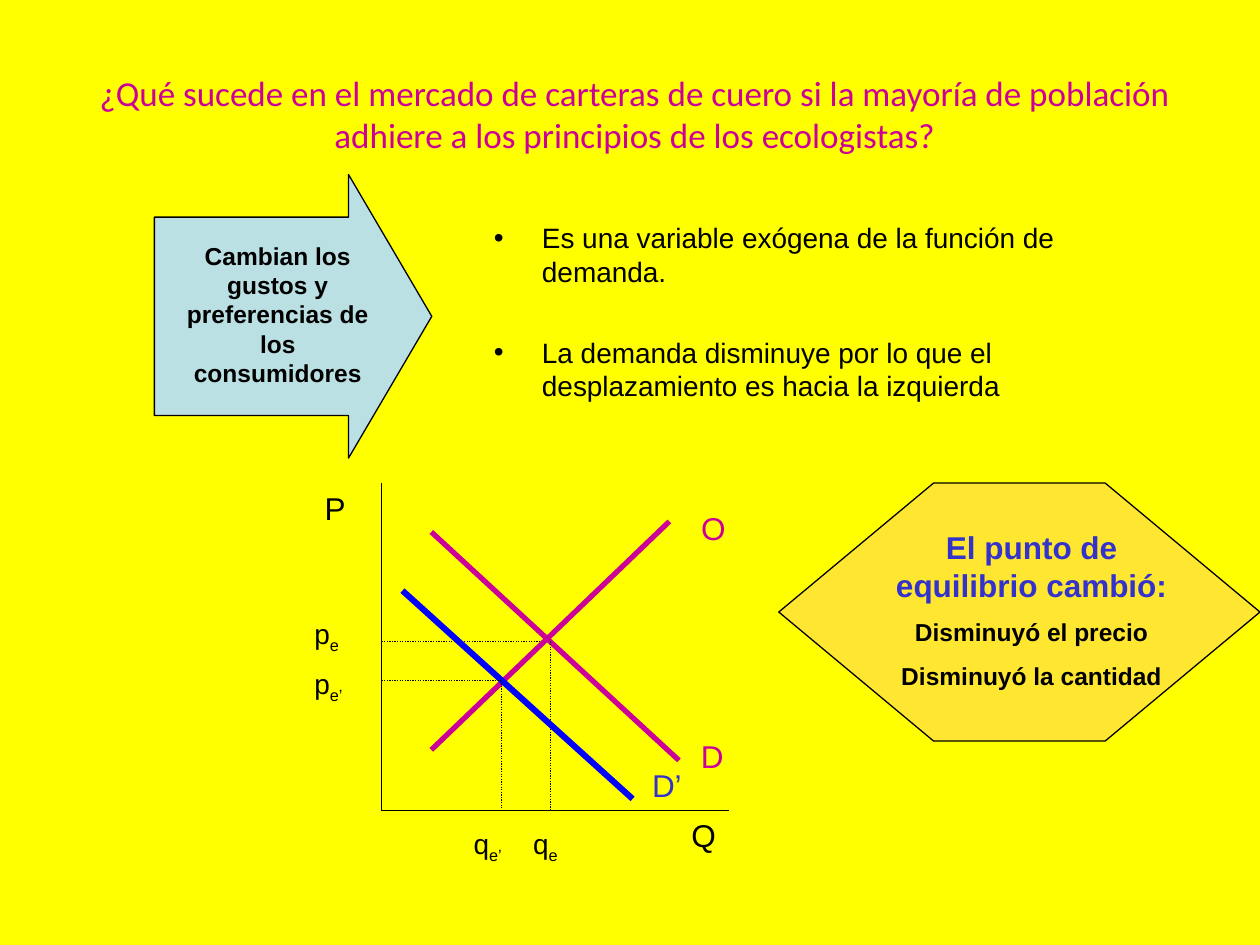
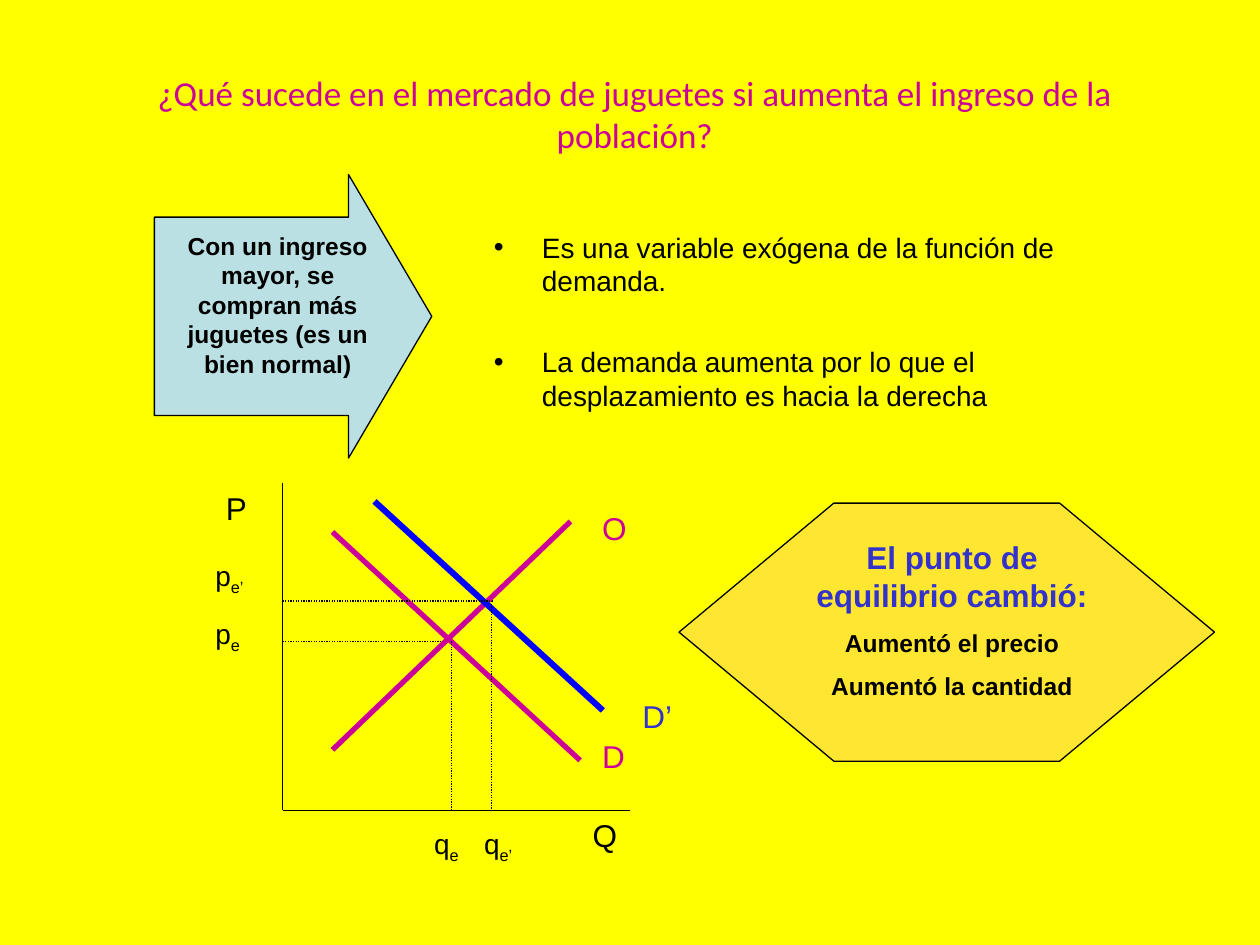
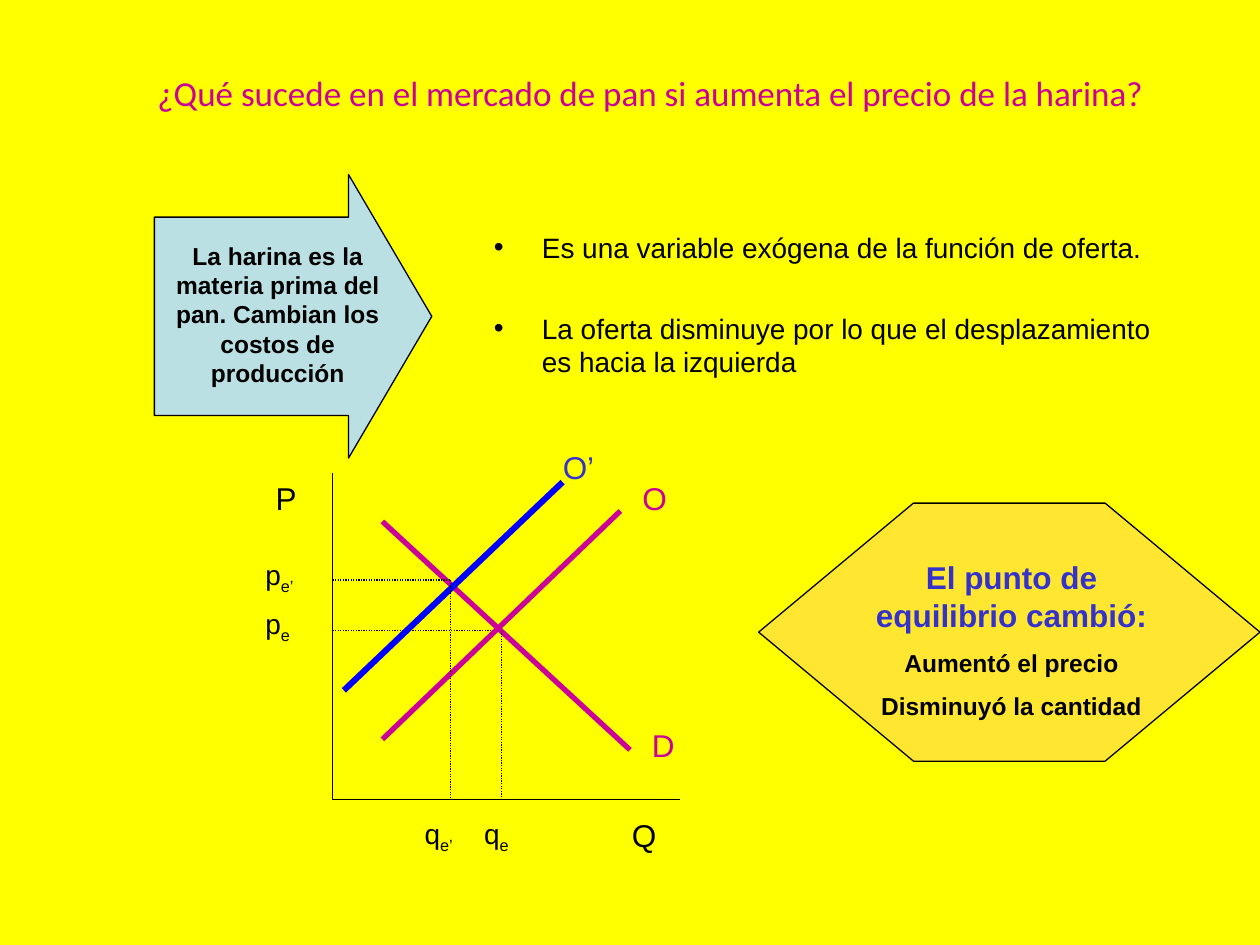
import dataclasses

import lxml.etree
import pptx
import pptx.dml.color
import pptx.enum.dml
import pptx.enum.shapes
import pptx.enum.text
import pptx.oxml.ns
import pptx.util

Pt = pptx.util.Pt
qn = pptx.oxml.ns.qn
ALIGN = pptx.enum.text.PP_ALIGN
AUTOFIT = pptx.enum.text.MSO_AUTO_SIZE
SHAPES = pptx.enum.shapes.MSO_SHAPE
DOTTED = pptx.enum.dml.MSO_LINE.ROUND_DOT


@dataclasses.dataclass(frozen=True)
class Theme:
    background: str = "FFFF00"
    ink: str = "000000"
    magenta: str = "CC0099"
    shifted_curve: str = "0000FF"
    highlight: str = "3333CC"
    cause_fill: str = "BBE0E3"
    result_fill: str = "FF99CC"
    result_opacity: int = 24000
    title_font: str = "Calibri"
    text_font: str = "Arial"
    title_size: float = 20
    heading_size: float = 18
    body_size: float = 16
    note_size: float = 14
    thin: float = 0.75
    curve: float = 3
    bold_curve: float = 3.5
    bullet_indent: float = 27.5
    bullet_gap: float = 27
    result_gap: float = 8


THEME = Theme()


@dataclasses.dataclass(frozen=True)
class MarketCase:
    """One market question; graph lengths are measured from the origin."""
    title: str
    title_box: tuple
    cause: str
    cause_top: float
    effects: tuple
    effects_top: float
    origin: tuple
    shifted_from: tuple
    shifted_to: tuple
    shifted_name: str
    shifted_label: tuple
    new_point: tuple
    new_price_top: float
    new_quantity_left: float
    supply_label: tuple
    quantity_axis_label: tuple
    result_box: tuple
    result_text_offset: tuple
    changes: tuple


CASES = (
    MarketCase(
        title="¿Qué sucede en el mercado de carteras de cuero si la mayoría de "
              "población adhiere a los principios de los ecologistas?",
        title_box=(36.5, 37.5, 652.5, 55.5),
        cause="Cambian los gustos y preferencias de los consumidores",
        cause_top=32.5,
        effects=("Es una variable exógena de la función de demanda.",
                 "La demanda disminuye por lo que el desplazamiento es hacia la izquierda"),
        effects_top=122.5,
        origin=(218, 463),
        shifted_from=(12, -125.5), shifted_to=(143.5, -6.5),
        shifted_name="D’", shifted_label=(147.5, -29),
        new_point=(68.5, -74), new_price_top=-85.5, new_quantity_left=45.5,
        supply_label=(175.5, -175.5), quantity_axis_label=(170, 0),
        result_box=(445, 276, 275, 147.5), result_text_offset=(51, 22),
        changes=("Disminuyó el precio", "Disminuyó la cantidad"),
    ),
    MarketCase(
        title="¿Qué sucede en el mercado de juguetes si aumenta el ingreso de la población?",
        title_box=(36.5, 37.5, 652.5, 55.5),
        cause="Con un ingreso mayor, se compran más juguetes (es un bien normal)",
        cause_top=27,
        effects=("Es una variable exógena de la función de demanda.",
                 "La demanda aumenta por lo que el desplazamiento es hacia la derecha"),
        effects_top=128,
        origin=(161.5, 463),
        shifted_from=(52.5, -176.5), shifted_to=(183, -57),
        shifted_name="D’", shifted_label=(198.5, -68.5),
        new_point=(119.5, -119.5), new_price_top=-147.5, new_quantity_left=108,
        supply_label=(175.5, -175.5), quantity_axis_label=(170, 0),
        result_box=(388, 287.5, 306, 147.5), result_text_offset=(62.5, 16.5),
        changes=("Aumentó el precio", "Aumentó la cantidad"),
    ),
    MarketCase(
        title="¿Qué sucede en el mercado de pan si aumenta el precio de la harina?",
        title_box=(60, 37.5, 623.5, 31),
        cause="La harina es la materia prima del pan. Cambian los costos de producción",
        cause_top=32.5,
        effects=("Es una variable exógena de la función de oferta.",
                 "La oferta disminuye por lo que el desplazamiento es hacia la izquierda"),
        effects_top=128,
        origin=(190, 457),
        shifted_from=(131.5, -181.5), shifted_to=(6.5, -62.5),
        shifted_name="O’", shifted_label=(124.5, -204.5),
        new_point=(67.5, -125.5), new_price_top=-142, new_quantity_left=45.5,
        supply_label=(170, -187), quantity_axis_label=(164, 6),
        result_box=(433.5, 287.5, 286.5, 147.5), result_text_offset=(51, 28),
        changes=("Aumentó el precio", "Disminuyó la cantidad"),
    ),
)


# Shared helpers
def rgb(value):
    return pptx.dml.color.RGBColor.from_string(value)


def points(box):
    return [Pt(length) for length in box]


def style(paragraph, size, color, font=THEME.text_font, bold=False, align=None):
    paragraph.alignment = align
    for run in paragraph.runs:
        run.font.name = font
        run.font.size = Pt(size)
        run.font.bold = bold
        run.font.color.rgb = rgb(color)


def add_text(slide, box, text):
    frame = slide.shapes.add_textbox(*points(box)).text_frame
    frame.word_wrap = True
    frame.auto_size = AUTOFIT.SHAPE_TO_FIT_TEXT
    frame.text = text
    return frame


def fill_placeholder(placeholder, box, text):
    placeholder.left, placeholder.top, placeholder.width, placeholder.height = points(box)
    frame = placeholder.text_frame
    frame.word_wrap = True
    frame.auto_size = AUTOFIT.NONE
    frame.vertical_anchor = pptx.enum.text.MSO_ANCHOR.TOP
    frame.text = text
    return frame


def add_outlined(slide, kind, box, fill, adjustments):
    shape = slide.shapes.add_shape(kind, *points(box))
    shape.shadow.inherit = False
    shape.fill.solid()
    shape.fill.fore_color.rgb = rgb(fill)
    shape.line.color.rgb = rgb(THEME.ink)
    shape.line.width = Pt(THEME.thin)
    for index, value in enumerate(adjustments):
        shape.adjustments[index] = value
    return shape


# Regions
def add_title(slide, case):
    frame = fill_placeholder(slide.shapes.title, case.title_box, case.title)
    style(frame.paragraphs[0], THEME.title_size, THEME.magenta,
          font=THEME.title_font, align=ALIGN.CENTER)


def add_cause(slide, box, case):
    left, top, _, _ = box
    arrow = add_outlined(slide, SHAPES.DOWN_ARROW, box, THEME.cause_fill, (0.7, 0.3))
    arrow.rotation = 270
    frame = add_text(slide, (left + 7, top + case.cause_top, 130.5, 91), case.cause)
    style(frame.paragraphs[0], THEME.note_size, THEME.ink, bold=True, align=ALIGN.CENTER)


def add_effects(slide, box, case):
    frame = fill_placeholder(slide.placeholders[1], box, "\n".join(case.effects))
    for number, paragraph in enumerate(frame.paragraphs):
        style(paragraph, THEME.body_size, THEME.ink)
        properties = paragraph._p.get_or_add_pPr()
        properties.set("marL", str(Pt(THEME.bullet_indent)))
        properties.set("indent", str(-Pt(THEME.bullet_indent)))
        if number:
            paragraph.space_before = Pt(THEME.bullet_gap)


def add_graph(slide, origin, case):
    origin_x, origin_y = origin

    def line(start, end, color=THEME.ink, width=THEME.thin, dash=None):
        ends = (origin_x + start[0], origin_y + start[1],
                origin_x + end[0], origin_y + end[1])
        connector = slide.shapes.add_connector(
            pptx.enum.shapes.MSO_CONNECTOR.STRAIGHT, *points(ends))
        connector.line.color.rgb = rgb(color)
        connector.line.width = Pt(width)
        if dash:
            connector.line.dash_style = dash
        lxml.etree.SubElement(connector._element.spPr, qn("a:effectLst"))

    def label(text, at, width, color=THEME.ink, subscript=""):
        size = THEME.body_size if subscript else THEME.heading_size
        box = (origin_x + at[0], origin_y + at[1], width, 26.5 if subscript else 29)
        paragraph = add_text(slide, box, text).paragraphs[0]
        if subscript:
            lowered = paragraph.add_run()
            lowered.text = subscript
            lowered._r.get_or_add_rPr().set("baseline", "-25000")
        style(paragraph, size, color)

    def equilibrium(point, guide_end, price_top, quantity_left, width, subscript):
        x, y = point
        line((0, y), (guide_end, y), dash=DOTTED)
        line((x, y), (x, 0), dash=DOTTED)
        label("p", (-45.5, price_top), 34, subscript=subscript)
        label("q", (quantity_left, 6), width, subscript=subscript)

    # Axes
    line((0, -187), (0, 0))
    line((0, 0), (198.5, 0))
    label("P", (-39.5, -187), 28)
    label("Q", case.quantity_axis_label, 45.5)

    # Starting demand, supply and equilibrium
    line((28.5, -159), (170, -28.5), THEME.magenta, THEME.curve)
    line((28.5, -34.5), (164.5, -165), THEME.magenta, THEME.curve)
    label("D", (175.5, -45.5), 28, THEME.magenta)
    label("O", case.supply_label, 34, THEME.magenta)
    equilibrium((96.5, -96.5), 90.5, -114, 79.5, 45.5, "e")

    # Shifted curve and new equilibrium
    line(case.shifted_from, case.shifted_to, THEME.shifted_curve, THEME.bold_curve)
    label(case.shifted_name, case.shifted_label, 39.5, THEME.highlight)
    equilibrium(case.new_point, case.new_point[0], case.new_price_top,
                case.new_quantity_left, 34, "e’")


def add_result(slide, box, case):
    left, top, _, _ = box
    hexagon = add_outlined(slide, SHAPES.HEXAGON, box, THEME.result_fill, (0.6,))
    color = hexagon._element.spPr.find(qn("a:solidFill"))[0]
    lxml.etree.SubElement(color, qn("a:alpha")).set("val", str(THEME.result_opacity))

    offset_x, offset_y = case.result_text_offset
    frame = add_text(slide, (left + offset_x, top + offset_y, 187, 101),
                     "\n".join(("El punto de equilibrio cambió:",) + case.changes))
    heading, *changes = frame.paragraphs
    style(heading, THEME.heading_size, THEME.highlight, bold=True, align=ALIGN.CENTER)
    for change in changes:
        style(change, THEME.note_size, THEME.ink, bold=True, align=ALIGN.CENTER)
        change.space_before = Pt(THEME.result_gap)


# Slide type
def add_market_slide(deck, case):
    slide = deck.slides.add_slide(deck.slide_layouts[1])
    add_title(slide, case)
    add_cause(slide, (86.5, 101.5, 162, 158.5), case)
    add_effects(slide, (275, case.effects_top, 392, 136), case)
    add_graph(slide, case.origin, case)
    add_result(slide, case.result_box, case)


def main():
    deck = pptx.Presentation()
    deck.slide_width, deck.slide_height = Pt(720), Pt(540)
    background = deck.slide_master.background.fill
    background.solid()
    background.fore_color.rgb = rgb(THEME.background)
    for case in CASES:
        add_market_slide(deck, case)
    deck.save("out.pptx")


if __name__ == "__main__":
    main()
